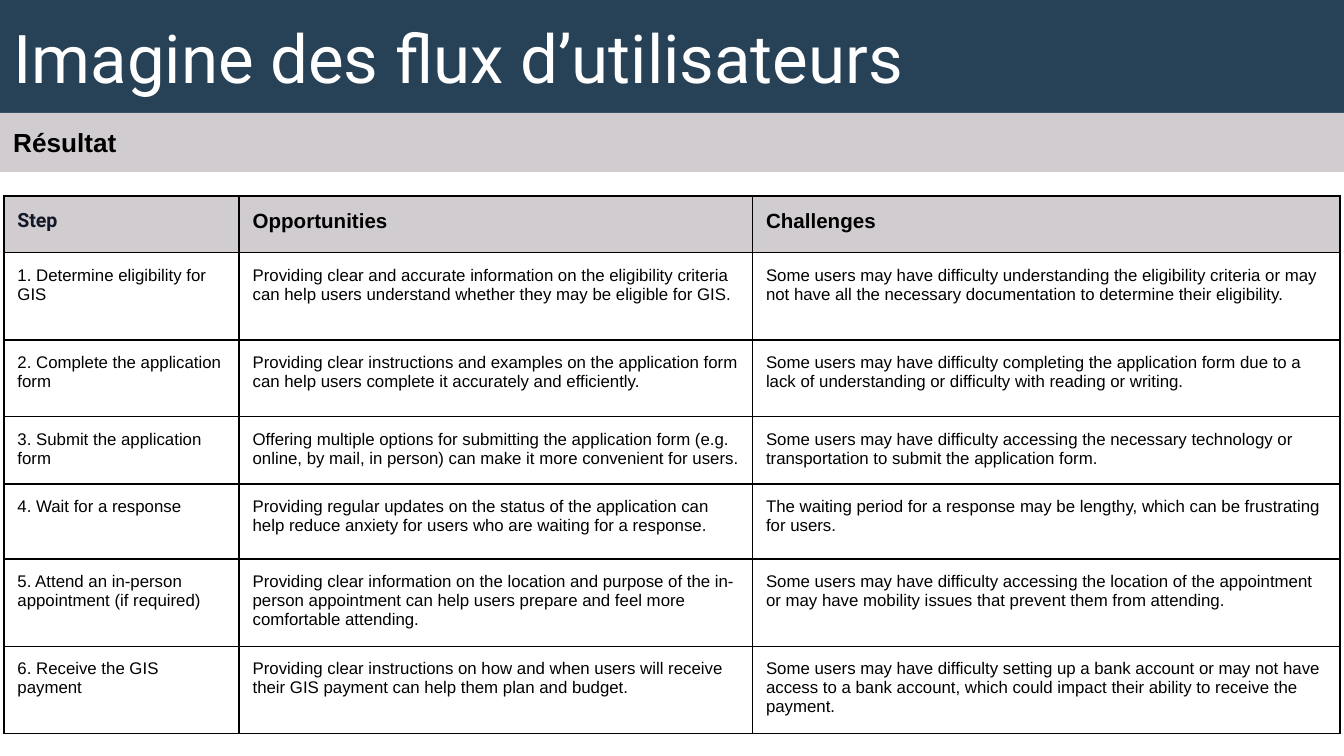
from lxml.etree import SubElement
from pptx import Presentation
from pptx.dml.color import RGBColor
from pptx.enum.shapes import MSO_SHAPE
from pptx.enum.text import MSO_ANCHOR, PP_ALIGN
from pptx.oxml.ns import qn
from pptx.util import Inches, Pt

NAVY = RGBColor(0x27, 0x41, 0x56)
GREY = RGBColor(0xD0, 0xCC, 0xD0)
INK = RGBColor(0x11, 0x18, 0x27)
BLACK = RGBColor(0, 0, 0)
WHITE = RGBColor(0xFF, 0xFF, 0xFF)

TITLE = "Imagine des flux d’utilisateurs"
SUBTITLE = "Résultat"
HEADERS = ("Step", "Opportunities", "Challenges")
STEPS = [
    ("1. Determine eligibility for GIS",
     "Providing clear and accurate information on the eligibility criteria can help users understand whether they may be eligible for GIS.",
     "Some users may have difficulty understanding the eligibility criteria or may not have all the necessary documentation to determine their eligibility."),
    ("2. Complete the application form",
     "Providing clear instructions and examples on the application form can help users complete it accurately and efficiently.",
     "Some users may have difficulty completing the application form due to a lack of understanding or difficulty with reading or writing."),
    ("3. Submit the application form",
     "Offering multiple options for submitting the application form (e.g. online, by mail, in person) can make it more convenient for users.",
     "Some users may have difficulty accessing the necessary technology or transportation to submit the application form."),
    ("4. Wait for a response",
     "Providing regular updates on the status of the application can help reduce anxiety for users who are waiting for a response.",
     "The waiting period for a response may be lengthy, which can be frustrating for users."),
    ("5. Attend an in-person appointment (if required)",
     "Providing clear information on the location and purpose of the in-person appointment can help users prepare and feel more comfortable attending.",
     "Some users may have difficulty accessing the location of the appointment or may have mobility issues that prevent them from attending."),
    ("6. Receive the GIS payment",
     "Providing clear instructions on how and when users will receive their GIS payment can help them plan and budget.",
     "Some users may have difficulty setting up a bank account or may not have access to a bank account, which could impact their ability to receive the payment."),
]

SLIDE_WIDTH = 10
SLIDE_HEIGHT = SLIDE_WIDTH * 9 / 16
TITLE_HEIGHT, SUBTITLE_HEIGHT = 0.84, 0.44
TABLE_LEFT, TABLE_TOP = 0.03, 1.46
COLUMN_WIDTHS = (1.75, 3.82, 4.37)
ROW_HEIGHTS = (0.42, 0.65, 0.57, 0.5, 0.56, 0.65, 0.65)
INSET = Inches(0.1)

TITLE_FONT = {"name": "Roboto", "size": Pt(36), "bold": False}
SUBTITLE_FONT = {"name": "Arial", "size": Pt(14), "bold": True}
STEP_FONT = {"name": "Roboto", "size": Pt(10.5), "bold": True}
HEADER_FONT = {"name": "Arial", "size": Pt(11), "bold": True}
BODY_FONT = {"name": "Arial", "size": Pt(9), "bold": False}


def write(frame, text, font_format, color):
    frame.word_wrap = True
    paragraph = frame.paragraphs[0]
    paragraph.alignment = PP_ALIGN.LEFT
    run = paragraph.add_run()
    run.text = text
    for name, value in font_format.items():
        setattr(run.font, name, value)
    run.font.color.rgb = color


def set_insets(target):
    for side in ("left", "top", "right", "bottom"):
        setattr(target, f"margin_{side}", INSET)


def place_band(shape, top, height, color, anchor):
    """Turn a shape into a filled band across the slide."""
    shape.left, shape.top = 0, Inches(top)
    shape.width, shape.height = Inches(SLIDE_WIDTH), Inches(height)
    shape.fill.solid()
    shape.fill.fore_color.rgb = color
    shape.line.fill.background()
    set_insets(shape.text_frame)
    shape.text_frame.vertical_anchor = anchor


def format_cell(cell, fill_color):
    set_insets(cell)
    cell.vertical_anchor = MSO_ANCHOR.TOP
    properties = cell._tc.get_or_add_tcPr()
    for tag in ("a:lnL", "a:lnR", "a:lnT", "a:lnB"):
        border = SubElement(properties, qn(tag), w=str(Pt(1)))
        fill = SubElement(border, qn("a:solidFill"))
        SubElement(fill, qn("a:srgbClr"), val=str(BLACK))
    if fill_color is None:
        cell.fill.background()
    else:
        cell.fill.solid()
        cell.fill.fore_color.rgb = fill_color


def add_step_table(slide):
    rows = [HEADERS, *STEPS]
    table = slide.shapes.add_table(
        len(rows), len(HEADERS), Inches(TABLE_LEFT), Inches(TABLE_TOP),
        Inches(sum(COLUMN_WIDTHS)), Inches(sum(ROW_HEIGHTS))).table
    table.first_row = table.horz_banding = False
    for column, width in zip(table.columns, COLUMN_WIDTHS):
        column.width = Inches(width)
    for row, height in zip(table.rows, ROW_HEIGHTS):
        row.height = Inches(height)
    for row_index, texts in enumerate(rows):
        for column_index, text in enumerate(texts):
            font_format, color = BODY_FONT, BLACK
            if row_index == 0:
                font_format = HEADER_FONT
                if column_index == 0:
                    font_format, color = STEP_FONT, INK
            cell = table.cell(row_index, column_index)
            format_cell(cell, GREY if row_index == 0 else None)
            write(cell.text_frame, text, font_format, color)


def main():
    presentation = Presentation()
    presentation.slide_width = Inches(SLIDE_WIDTH)
    presentation.slide_height = Inches(SLIDE_HEIGHT)
    slide = presentation.slides.add_slide(presentation.slide_layouts[5])

    title = slide.shapes.title
    place_band(title, 0, TITLE_HEIGHT, NAVY, MSO_ANCHOR.MIDDLE)
    write(title.text_frame, TITLE, TITLE_FONT, WHITE)

    subtitle = slide.shapes.add_shape(MSO_SHAPE.RECTANGLE, 0, 0, 0, 0)
    subtitle.shadow.inherit = False
    place_band(subtitle, TITLE_HEIGHT, SUBTITLE_HEIGHT, GREY, MSO_ANCHOR.TOP)
    write(subtitle.text_frame, SUBTITLE, SUBTITLE_FONT, BLACK)

    add_step_table(slide)
    presentation.save("out.pptx")


if __name__ == "__main__":
    main()
